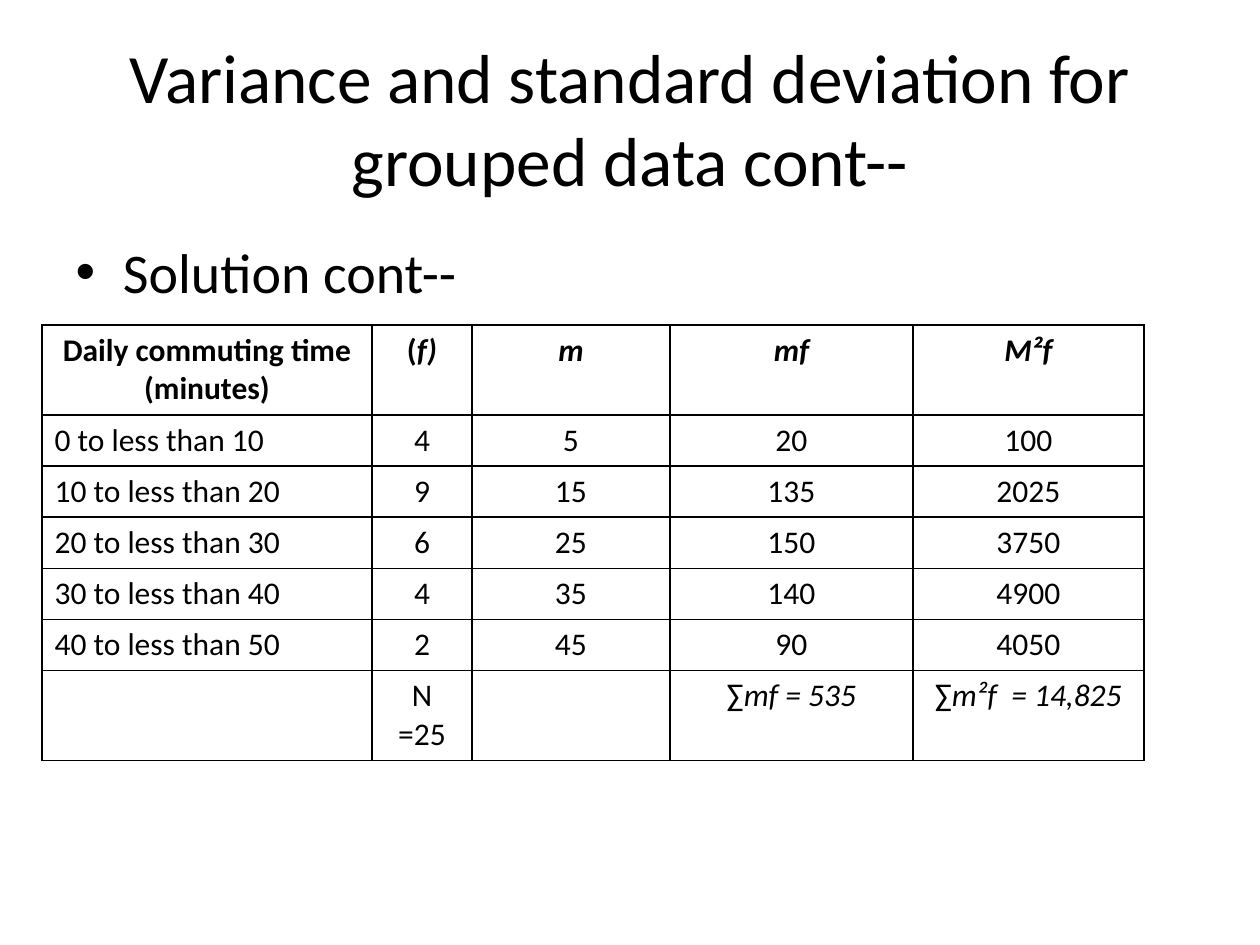
import pptx
import pptx.dml.color
import pptx.enum.text
import pptx.oxml
import pptx.oxml.ns
import pptx.util

EMU_PER_PX = 914400 / 126
FONT = "Calibri"
BLACK = "000000"
ALIGN = pptx.enum.text.PP_ALIGN

COLUMN_WIDTHS = [330, 100, 198, 243, 231]
ROW_HEIGHTS = [90] + [51] * 5 + [90]

# Each cell is a pair: upright text, then italic text
HEADINGS = [("Daily commuting time (minutes)", ""), ("(", "f)"), ("", "m"), ("", "mf"), ("", "M²f")]
CLASSES = [
    ("0 to less than 10", 4, 5, 20, 100),
    ("10 to less than 20", 9, 15, 135, 2025),
    ("20 to less than 30", 6, 25, 150, 3750),
    ("30 to less than 40", 4, 35, 140, 4900),
    ("40 to less than 50", 2, 45, 90, 4050),
]
TOTALS = [("", ""), ("N =25", ""), ("", ""), ("∑", "mf = 535"), ("∑", "m²f  = 14,825")]


def px(length):
    return pptx.util.Emu(round(length * EMU_PER_PX))


def color(hex_value):
    return pptx.dml.color.RGBColor.from_string(hex_value)


def format_font(font, size, bold=False, italic=False):
    font.name = FONT
    font.size = pptx.util.Pt(size)
    font.bold = bold
    font.italic = italic
    font.color.rgb = color(BLACK)


def fill_placeholder(placeholder, text, box, size):
    placeholder.left, placeholder.top, placeholder.width, placeholder.height = map(px, box)
    frame = placeholder.text_frame
    frame.text = text
    frame.auto_size = pptx.enum.text.MSO_AUTO_SIZE.NONE
    format_font(frame.paragraphs[0].runs[0].font, size)


def add_borders(cell):
    properties = cell._tc.get_or_add_tcPr()
    for position, side in enumerate(("lnL", "lnR", "lnT", "lnB")):
        line = pptx.oxml.parse_xml(
            f'<a:{side} {pptx.oxml.ns.nsdecls("a")} w="12700">'
            f'<a:solidFill><a:srgbClr val="{BLACK}"/></a:solidFill></a:{side}>'
        )
        properties.insert(position, line)


def fill_cell(cell, parts, align, bold):
    cell.fill.background()
    add_borders(cell)
    paragraph = cell.text_frame.paragraphs[0]
    paragraph.alignment = align
    for text, italic in zip(parts, (False, True)):
        if text:
            run = paragraph.add_run()
            run.text = text
            format_font(run.font, 18, bold, italic)


def add_frequency_table(slide, left, top):
    class_rows = [[(str(value), "") for value in row] for row in CLASSES]
    rows = [HEADINGS, *class_rows, TOTALS]
    table = slide.shapes.add_table(
        len(rows), len(COLUMN_WIDTHS), px(left), px(top),
        px(sum(COLUMN_WIDTHS)), px(sum(ROW_HEIGHTS)),
    ).table
    table.first_row = table.horz_banding = False
    for column, width in zip(table.columns, COLUMN_WIDTHS):
        column.width = px(width)
    for row, height in zip(table.rows, ROW_HEIGHTS):
        row.height = px(height)
    for r, row in enumerate(rows):
        for c, parts in enumerate(row):
            is_heading = r == 0
            align = ALIGN.LEFT if c == 0 and not is_heading else ALIGN.CENTER
            fill_cell(table.cell(r, c), parts, align, is_heading)


def main():
    presentation = pptx.Presentation()
    presentation.slide_width, presentation.slide_height = px(1260), px(945)
    slide = presentation.slides.add_slide(presentation.slide_layouts[1])

    # Title and bullet
    title, solution = slide.placeholders
    fill_placeholder(title, "Variance and standard deviation for grouped data cont--",
                     (63, 38, 1134, 158), 39.6)
    fill_placeholder(solution, "Solution cont--", (63, 231, 1134, 624), 32)

    # Grouped data
    add_frequency_table(slide, 42, 325)

    presentation.save("out.pptx")


if __name__ == "__main__":
    main()
